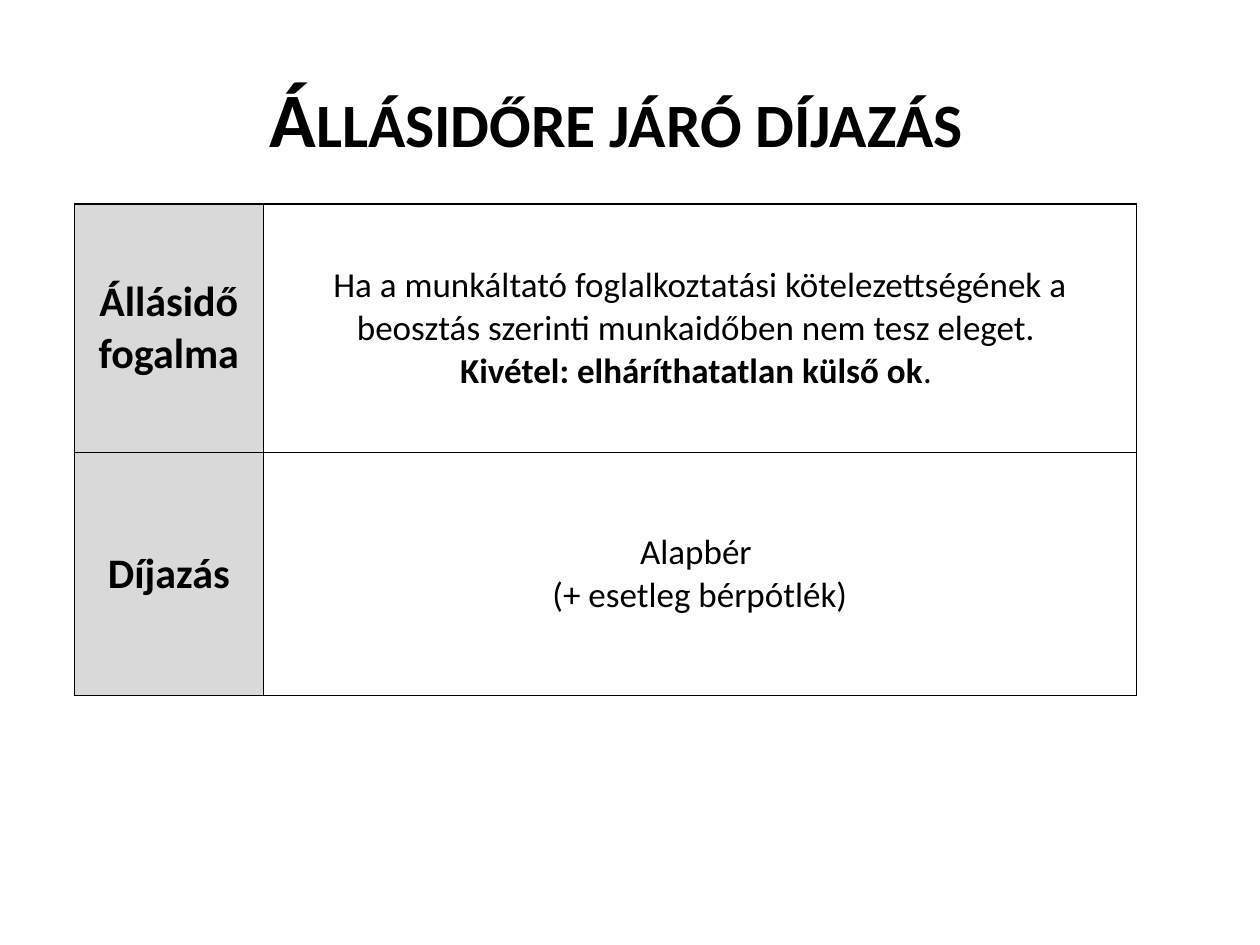
from lxml import etree
from pptx import Presentation
from pptx.dml.color import RGBColor
from pptx.enum.text import MSO_ANCHOR, PP_ALIGN
from pptx.oxml.ns import qn
from pptx.util import Inches, Pt

MIDDLE = MSO_ANCHOR.MIDDLE
CENTER = PP_ALIGN.CENTER
BLACK = RGBColor(0x00, 0x00, 0x00)
WHITE = RGBColor(0xFF, 0xFF, 0xFF)
GREY = RGBColor(0xD9, 0xD9, 0xD9)
FONT = "Calibri"

# Content: each row is a label and its paragraphs, made of (text, bold) runs
TITLE = "Állásidőre járó díjazás"
ROWS = [
    ("Állásidő fogalma", [
        [("Ha a munkáltató foglalkoztatási kötelezettségének a "
          "beosztás szerinti munkaidőben nem tesz eleget. ", False)],
        [("Kivétel: elháríthatatlan külső ok", True), (". ", False)],
    ]),
    ("Díjazás", [
        [("Alapbér ", False)],
        [("(+ esetleg bérpótlék)", False)],
    ]),
]
WIDTHS = [1.5, 6.93]
HEIGHTS = [1.97, 1.93]


def write(frame, paras, size):
    """Fill a text frame with centred paragraphs of (text, bold) runs."""
    for i, runs in enumerate(paras):
        para = frame.paragraphs[0] if i == 0 else frame.add_paragraph()
        para.alignment = CENTER
        font = para.font
        font.name, font.size = FONT, Pt(size)
        font.color.rgb = BLACK
        for text, bold in runs:
            run = para.add_run()
            run.text = text
            run.font.bold = bold


def edge(cell):
    """Draw a thin black border on all four sides, ahead of the fill."""
    props = cell._tc.get_or_add_tcPr()
    for i, side in enumerate(("lnL", "lnR", "lnT", "lnB")):
        line = etree.Element(qn(f"a:{side}"), w=str(Pt(1)))
        fill = etree.SubElement(line, qn("a:solidFill"))
        etree.SubElement(fill, qn("a:srgbClr"), val=str(BLACK))
        props.insert(i, line)


deck = Presentation()
deck.slide_width, deck.slide_height = Inches(10), Inches(7.5)
slide = deck.slides.add_slide(deck.slide_layouts[6])

# Title in small capitals, set slightly left of centre
box = slide.shapes.add_textbox(Inches(0.5), Inches(0.3), Inches(9), Inches(1.25))
frame = box.text_frame
frame.word_wrap = True
frame.vertical_anchor = MIDDLE
frame.margin_right = Inches(0.32)
write(frame, [[(TITLE, True)]], 44)
frame.paragraphs[0].runs[0]._r.get_or_add_rPr().set("cap", "small")

# Table of labels and explanations
table = slide.shapes.add_table(
    len(ROWS), len(WIDTHS), Inches(0.59), Inches(1.62),
    Inches(sum(WIDTHS)), Inches(sum(HEIGHTS))).table
table.first_row = table.horz_banding = False
for col, width in zip(table.columns, WIDTHS):
    col.width = Inches(width)
for row, height, (label, paras) in zip(table.rows, HEIGHTS, ROWS):
    row.height = Inches(height)
    parts = [([[(label, True)]], 24, GREY), (paras, 20, WHITE)]
    for cell, (text, size, color) in zip(row.cells, parts):
        cell.vertical_anchor = MIDDLE
        cell.fill.solid()
        cell.fill.fore_color.rgb = color
        edge(cell)
        write(cell.text_frame, text, size)

deck.save("out.pptx")
